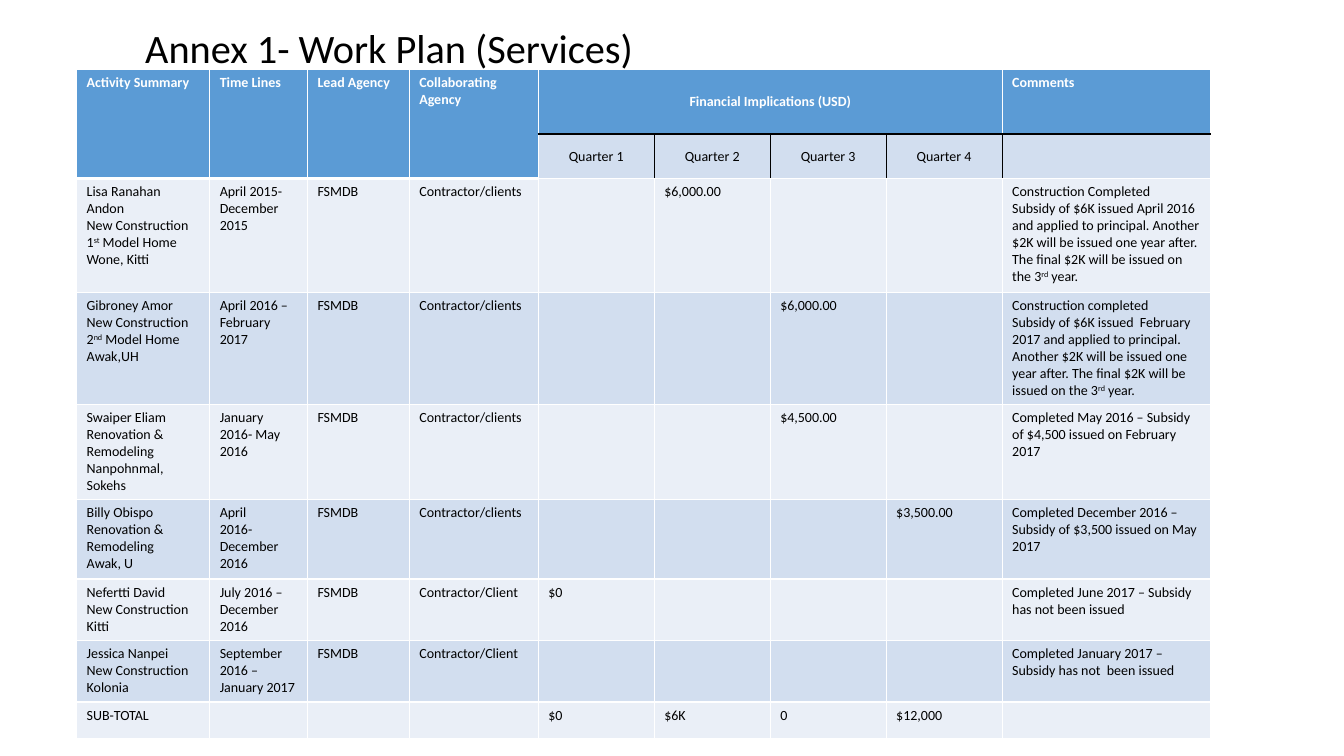
from lxml.etree import fromstring
from pptx import Presentation
from pptx.dml.color import RGBColor
from pptx.enum.text import MSO_ANCHOR, MSO_AUTO_SIZE, PP_ALIGN
from pptx.util import Inches, Pt

DRAWING = "http://schemas.openxmlformats.org/drawingml/2006/main"
COLUMN_WIDTHS = [1.32, 0.97, 1.01, 1.28, 1.15, 1.15, 1.15, 1.15, 2.07]
ROW_HEIGHTS = [0.64, 0.44, 1.13, 1.11, 0.94, 0.79, 0.61, 0.61, 0.36]
FIRST_QUARTER, COMMENTS = 4, 8

HEADINGS = [
    ["Activity Summary", "Time Lines", "Lead Agency", "Collaborating Agency",
     "Financial Implications (USD)", "", "", "", "Comments"],
    ["", "", "", "", "Quarter 1", "Quarter 2", "Quarter 3", "Quarter 4", ""],
]
ACTIVITIES = [
    ["Lisa Ranahan Andon\nNew Construction\n1^st^ Model Home\nWone, Kitti",
     "April 2015- December 2015", "FSMDB", "Contractor/clients",
     "", "$6,000.00", "", "",
     "Construction Completed\nSubsidy of $6K issued April 2016 and applied to principal. "
     "Another $2K will be issued one year after. "
     "The final $2K will be issued on the 3^rd^ year."],
    ["Gibroney Amor\nNew Construction\n2^nd^ Model Home\nAwak,UH",
     "April 2016 – February 2017", "FSMDB", "Contractor/clients",
     "", "", "$6,000.00", "",
     "Construction completed\nSubsidy of $6K issued  February 2017 and applied to principal.\n"
     "Another $2K will be issued one year after. "
     "The final $2K will be issued on the 3^rd^ year."],
    ["Swaiper Eliam\nRenovation & Remodeling\nNanpohnmal, Sokehs",
     "January 2016- May 2016", "FSMDB", "Contractor/clients",
     "", "", "$4,500.00", "",
     "Completed May 2016 – Subsidy of $4,500 issued on February 2017"],
    ["Billy Obispo\nRenovation & Remodeling\nAwak, U",
     "April\n2016- December 2016", "FSMDB", "Contractor/clients",
     "", "", "", "$3,500.00",
     "Completed December 2016 – Subsidy of $3,500 issued on May 2017"],
    ["Nefertti David\nNew Construction\nKitti",
     "July 2016 – December 2016", "FSMDB", "Contractor/Client",
     "$0", "", "", "",
     "Completed June 2017 – Subsidy has not been issued"],
    ["Jessica Nanpei\nNew Construction\nKolonia",
     "September 2016 – January 2017", "FSMDB", "Contractor/Client",
     "", "", "", "",
     "Completed January 2017 – Subsidy has not  been issued"],
    ["SUB-TOTAL", "", "", "", "$0", "$6K", "0", "$12,000", ""],
]


def color(value):
    return RGBColor.from_string(value)


class WorkPlanSlide:
    font_name = "Calibri"
    black, white = "000000", "FFFFFF"
    header_fill, dark_band, light_band = "5B9BD5", "D2DEEF", "EAEFF7"

    def __init__(self, presentation):
        self.slide = presentation.slides.add_slide(presentation.slide_layouts[5])

    def style_font(self, font, size, value, bold=False):
        font.name, font.size, font.bold = self.font_name, Pt(size), bold
        font.color.rgb = color(value)

    def title(self, text, left, top, width, height):
        shape = self.slide.shapes.title
        shape.left, shape.top = Inches(left), Inches(top)
        shape.width, shape.height = Inches(width), Inches(height)
        frame = shape.text_frame
        frame.text = text
        frame.auto_size = MSO_AUTO_SIZE.NONE
        frame.vertical_anchor = MSO_ANCHOR.MIDDLE
        paragraph = frame.paragraphs[0]
        paragraph.alignment = PP_ALIGN.LEFT
        paragraph.line_spacing = 0.9
        self.style_font(paragraph.font, 28.8, self.black)

    def table(self, rows, left, top):
        frame = self.slide.shapes.add_table(
            len(rows), len(COLUMN_WIDTHS), Inches(left), Inches(top),
            Inches(sum(COLUMN_WIDTHS)), Inches(sum(ROW_HEIGHTS)))
        table = frame.table
        table.first_row = table.horz_banding = False
        for column, width in zip(table.columns, COLUMN_WIDTHS):
            column.width = Inches(width)
        for row, height in zip(table.rows, ROW_HEIGHTS):
            row.height = Inches(height)
        for row, texts in enumerate(rows):
            for column, text in enumerate(texts):
                self.cell(table.cell(row, column), row, column, text)
        for column in range(FIRST_QUARTER):
            table.cell(0, column).merge(table.cell(1, column))
        table.cell(0, FIRST_QUARTER).merge(table.cell(0, COMMENTS - 1))

    def cell(self, cell, row, column, text):
        heading = row == 0 or (row == 1 and column < FIRST_QUARTER)
        centred = row < 2 and FIRST_QUARTER <= column < COMMENTS
        band = self.dark_band if row % 2 else self.light_band
        cell.fill.solid()
        cell.fill.fore_color.rgb = color(self.header_fill if heading else band)
        cell.vertical_anchor = MSO_ANCHOR.MIDDLE if centred else MSO_ANCHOR.TOP
        frame = cell.text_frame
        for index, line in enumerate(text.split("\n")):
            paragraph = frame.add_paragraph() if index else frame.paragraphs[0]
            paragraph.alignment = PP_ALIGN.CENTER if centred else PP_ALIGN.LEFT
            self.style_font(paragraph.font, 10, self.white if heading else self.black, heading)
            self.runs(paragraph, line)
        self.borders(cell, row, column)

    def runs(self, paragraph, line):
        for index, part in enumerate(line.split("^")):
            if part:
                run = paragraph.add_run()
                run.text = part
                if index % 2:
                    run._r.get_or_add_rPr().set("baseline", "30000")

    def borders(self, cell, row, column):
        financial = column >= FIRST_QUARTER
        quarter_row = row == 1 and financial
        black_sides = {
            "L": quarter_row and column > FIRST_QUARTER,
            "R": quarter_row and column < COMMENTS,
            "T": quarter_row,
            "B": row == 0 and financial,
        }
        properties = cell._tc.get_or_add_tcPr()
        for index, (side, is_black) in enumerate(black_sides.items()):
            thick = side == "B" and row < 2 and not financial
            properties.insert(index, fromstring(
                f'<a:ln{side} xmlns:a="{DRAWING}" w="{Pt(3 if thick else 1)}"><a:solidFill>'
                f'<a:srgbClr val="{self.black if is_black else self.white}"/>'
                f'</a:solidFill></a:ln{side}>'))


def main():
    presentation = Presentation()
    presentation.slide_width, presentation.slide_height = Inches(13.33), Inches(7.5)
    work_plan = WorkPlanSlide(presentation)
    work_plan.title("Annex 1- Work Plan (Services)", 1.34, 0.33, 11.03, 0.35)
    work_plan.table(HEADINGS + ACTIVITIES, 0.76, 0.69)
    presentation.save("out.pptx")


if __name__ == "__main__":
    main()
